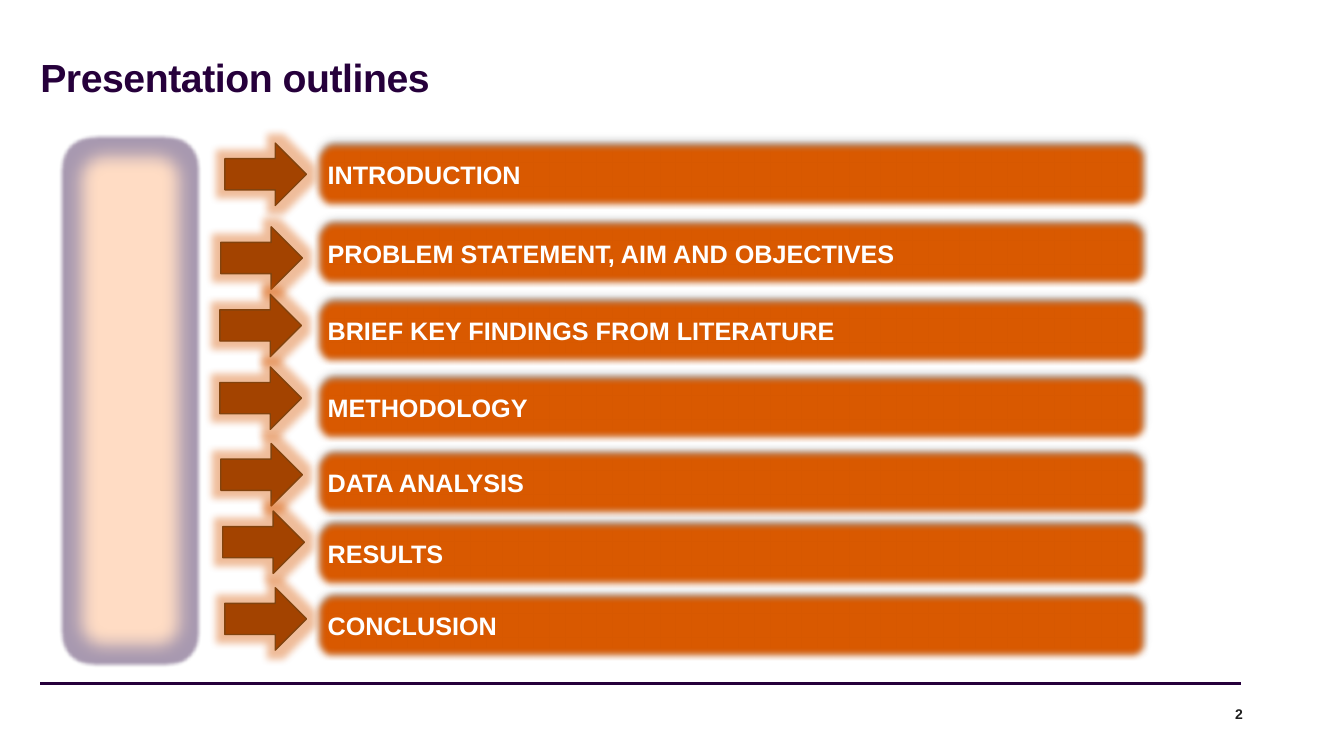
from lxml import etree
from pptx import Presentation
from pptx.dml.color import RGBColor
from pptx.enum.shapes import MSO_CONNECTOR, MSO_SHAPE
from pptx.enum.text import MSO_ANCHOR, MSO_AUTO_SIZE, PP_ALIGN
from pptx.oxml.ns import qn
from pptx.util import Pt

ROUNDED = MSO_SHAPE.ROUNDED_RECTANGLE
ARROW = MSO_SHAPE.RIGHT_ARROW
STRAIGHT = MSO_CONNECTOR.STRAIGHT
MIDDLE, BOTTOM = MSO_ANCHOR.MIDDLE, MSO_ANCHOR.BOTTOM
LEFT, RIGHT = PP_ALIGN.LEFT, PP_ALIGN.RIGHT
NO_AUTOFIT = MSO_AUTO_SIZE.NONE

PURPLE = RGBColor(0x26, 0x00, 0x3B)
ORANGE = RGBColor(0xD9, 0x59, 0x00)
LIGHT_ORANGE = RGBColor(0xE9, 0x88, 0x37)
RUST = RGBColor(0xA3, 0x43, 0x00)
BROWN = RGBColor(0x82, 0x43, 0x0E)
PEACH = RGBColor(0xFF, 0xDC, 0xC4)
GREY = RGBColor(0x80, 0x80, 0x80)
BLACK = RGBColor(0x00, 0x00, 0x00)
INK = RGBColor(0x1E, 0x1E, 0x1E)
WHITE = RGBColor(0xFF, 0xFF, 0xFF)

FONT = "Arial"
BAR_LEFT, BAR_WIDTH, BAR_HEIGHT = 224.6, 595.4, 49
ARROW_WIDTH, ARROW_HEIGHT = 58.3, 44.6

# section, bar top, arrow left, arrow top
SECTIONS = [
    ("INTRODUCTION", 100.1, 160.6, 102.2),
    ("PROBLEM STATEMENT, AIM AND OBJECTIVES", 156.2, 157.7, 162),
    ("BRIEF KEY FINDINGS FROM LITERATURE", 211.7, 157, 210.2),
    ("METHODOLOGY", 266.4, 157, 262.1),
    ("DATA ANALYSIS", 320.4, 157.7, 316.8),
    ("RESULTS", 370.8, 159.1, 365),
    ("CONCLUSION", 422.6, 160.6, 419.8),
]


def effect_list(s):
    sp_pr = s._element.spPr
    effects = sp_pr.find(qn("a:effectLst"))
    if effects is None:
        effects = etree.SubElement(sp_pr, qn("a:effectLst"))
    return effects


def add_effect(s, name, color=None, **attributes):
    effect = etree.SubElement(effect_list(s), qn(name))
    for key, value in attributes.items():
        effect.set(key, str(int(value)))
    if color is not None:
        clr = etree.SubElement(effect, qn("a:srgbClr"), val=str(color))
        etree.SubElement(clr, qn("a:alpha"), val="40000")


def add_block(slide, kind, box, fill, line):
    s = slide.shapes.add_shape(kind, *map(Pt, box))
    s.shadow.inherit = False
    s.fill.solid()
    s.fill.fore_color.rgb = fill
    s.line.color.rgb = line
    s.line.width = Pt(1)
    return s


def set_text(tf, text, size, color, align=LEFT, anchor=MIDDLE):
    tf.word_wrap = True
    tf.vertical_anchor = anchor
    tf.text = text
    p = tf.paragraphs[0]
    p.alignment = align
    r = p.runs[0]
    r.font.name = FONT
    r.font.size = Pt(size)
    r.font.bold = True
    r.font.color.rgb = color
    return p


def clear_margins(tf):
    tf.margin_left = tf.margin_top = tf.margin_right = tf.margin_bottom = 0


def add_title(slide, text):
    s = slide.shapes.title
    s.left, s.top, s.width, s.height = map(Pt, (28.8, 15.1, 901.4, 56.9))
    tf = s.text_frame
    clear_margins(tf)
    tf.auto_size = NO_AUTOFIT
    p = set_text(tf, text, 28, PURPLE, anchor=BOTTOM)
    p.line_spacing = 0.9
    p.runs[0]._r.get_or_add_rPr().set("spc", "-30")


def add_footer(slide, number):
    rule = slide.shapes.add_connector(STRAIGHT, Pt(28.8), Pt(488.2), Pt(886.3), Pt(488.2))
    rule.line.color.rgb = PURPLE
    rule.line.width = Pt(2.25)
    effect_list(rule)
    tf = slide.shapes.add_textbox(Pt(848.9), Pt(501.1), Pt(38.9), Pt(17.3)).text_frame
    clear_margins(tf)
    set_text(tf, number, 10, INK, RIGHT)


def add_panel(slide):
    s = add_block(slide, ROUNDED, (46.8, 100.1, 92.2, 372.2), PEACH, GREY)
    add_effect(s, "a:glow", PURPLE, rad=Pt(5))
    add_effect(s, "a:softEdge", rad=Pt(12.5))


def add_bar(slide, text, top):
    s = add_block(slide, ROUNDED, (BAR_LEFT, top, BAR_WIDTH, BAR_HEIGHT), ORANGE, LIGHT_ORANGE)
    add_effect(s, "a:outerShdw", BLACK, blurRad=Pt(4), dist=Pt(3), dir=270 * 60000)
    add_effect(s, "a:softEdge", rad=Pt(5))
    set_text(s.text_frame, text, 18, WHITE)


def add_arrow(slide, left, top):
    s = add_block(slide, ARROW, (left, top, ARROW_WIDTH, ARROW_HEIGHT), RUST, BROWN)
    add_effect(s, "a:glow", ORANGE, rad=Pt(11))


def main():
    prs = Presentation()
    prs.slide_width, prs.slide_height = Pt(960), Pt(540)
    slide = prs.slides.add_slide(prs.slide_layouts[5])
    add_footer(slide, "2")
    add_title(slide, "Presentation outlines")
    add_panel(slide)
    for text, bar_top, arrow_left, arrow_top in SECTIONS:
        add_bar(slide, text, bar_top)
        add_arrow(slide, arrow_left, arrow_top)
    prs.save("out.pptx")


if __name__ == "__main__":
    main()
